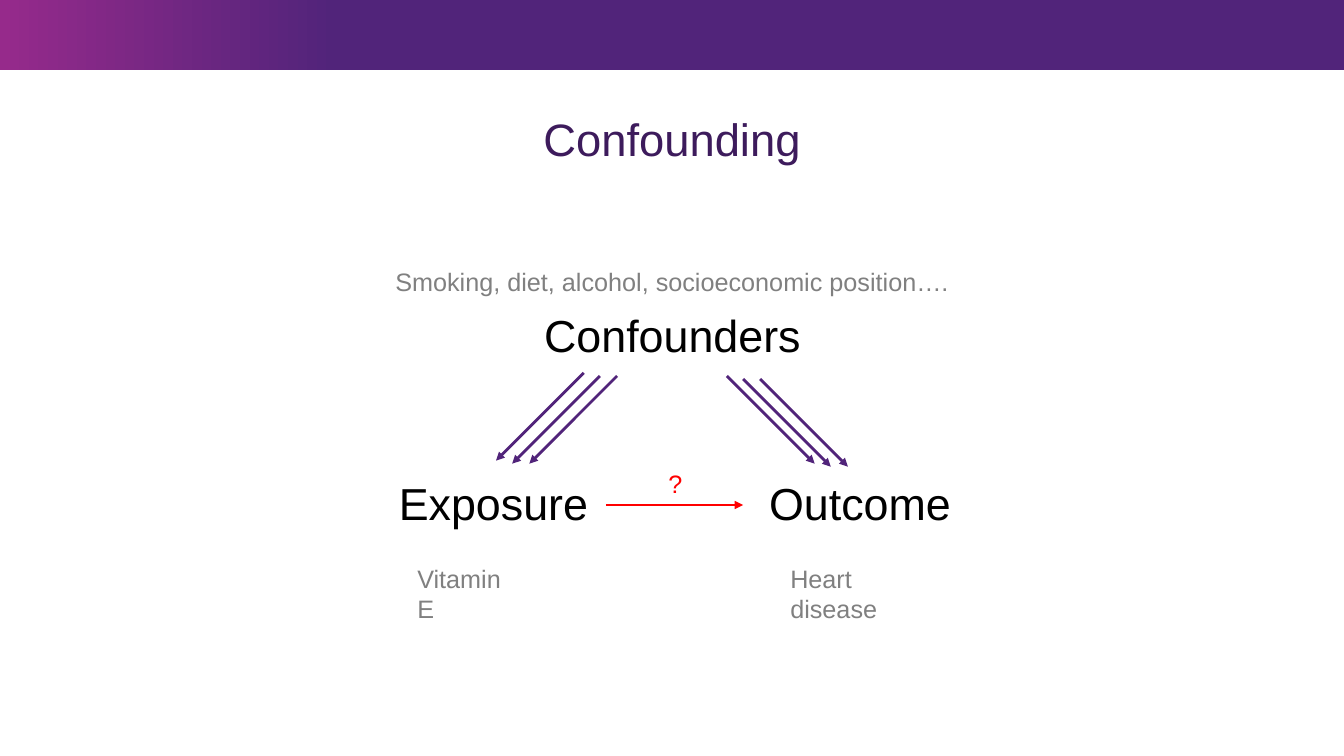
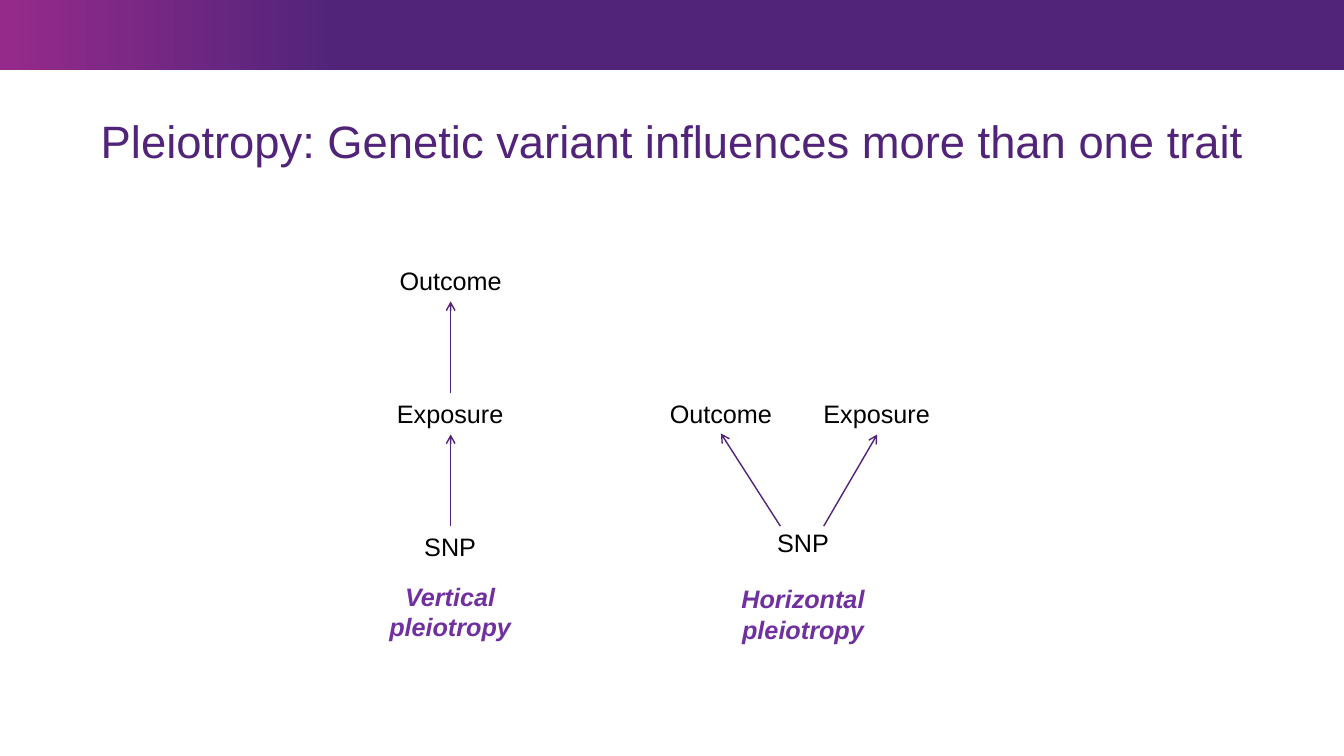
from dataclasses import dataclass

from lxml.etree import SubElement
from pptx import Presentation
from pptx.dml.color import RGBColor as Rgb
from pptx.enum.shapes import MSO_CONNECTOR as Conn, MSO_SHAPE as Shape
from pptx.enum.text import MSO_ANCHOR as Anchor, MSO_AUTO_SIZE as Auto, PP_ALIGN as Align
from pptx.oxml.ns import qn
from pptx.slide import Slide
from pptx.text.text import Font
from pptx.util import Inches, Pt


@dataclass(frozen=True)
class Theme:
    font: str = "Arial"
    purple: str = "51247A"
    dark: str = "3D1B5C"
    pink: str = "962A8B"
    violet: str = "7030A0"
    grey: str = "808080"
    black: str = "000000"
    red: str = "FF0000"
    title: float = 32.4
    large: float = 32
    small: float = 18


THEME = Theme()


@dataclass(frozen=True)
class Label:
    text: str
    left: float
    top: float
    width: float
    height: float = 0.4
    size: float = THEME.small
    color: str = THEME.black
    align: Align = Align.CENTER
    strong: bool = False


@dataclass(frozen=True)
class Arrow:
    x1: float
    y1: float
    x2: float
    y2: float
    color: str = THEME.purple
    weight: float = 2
    head: str = "triangle"


def style(font: Font, size: float, color: str, strong: bool = False) -> None:
    font.name = THEME.font
    font.size = Pt(size)
    font.color.rgb = Rgb.from_string(color)
    font.bold = font.italic = strong


def add_band(slide: Slide, width: int) -> None:
    band = slide.shapes.add_shape(Shape.RECTANGLE, 0, 0, width, Inches(0.69))
    band.shadow.inherit = False
    band.line.fill.background()
    band.fill.gradient()
    band.fill.gradient_angle = 0
    stops = ((0, THEME.pink), (0.25, THEME.purple))
    for stop, (place, color) in zip(band.fill.gradient_stops, stops):
        stop.position = place
        stop.color.rgb = Rgb.from_string(color)


def set_title(slide: Slide, text: str, top: float, color: str) -> None:
    title = slide.shapes.title
    title.left, title.top = Inches(0.76), Inches(top)
    title.width, title.height = Inches(11.81), Inches(0.51)
    frame = title.text_frame
    frame.text = text
    frame.auto_size = Auto.NONE
    frame.word_wrap = True
    frame.vertical_anchor = Anchor.MIDDLE
    frame.margin_left = frame.margin_right = 0
    frame.margin_top = frame.margin_bottom = 0
    para = frame.paragraphs[0]
    para.alignment = Align.CENTER
    para.line_spacing = 0.9
    style(para.runs[0].font, THEME.title, color)


def add_label(slide: Slide, label: Label) -> None:
    box = slide.shapes.add_textbox(
        Inches(label.left), Inches(label.top), Inches(label.width), Inches(label.height)
    )
    frame = box.text_frame
    frame.word_wrap = True
    frame.text = label.text
    para = frame.paragraphs[0]
    para.alignment = label.align
    style(para.runs[0].font, label.size, label.color, label.strong)


def add_arrow(slide: Slide, arrow: Arrow) -> None:
    ends = (arrow.x1, arrow.y1, arrow.x2, arrow.y2)
    line = slide.shapes.add_connector(Conn.STRAIGHT, *map(Inches, ends))
    line.line.color.rgb = Rgb.from_string(arrow.color)
    line.line.width = Pt(arrow.weight)
    SubElement(line.line._get_or_add_ln(), qn("a:tailEnd"), type=arrow.head)
    SubElement(line._element.spPr, qn("a:effectLst"))


def big(text: str, left: float, top: float, width: float) -> Label:
    return Label(text, left, top, width, 0.64, THEME.large)


def note(text: str, left: float, top: float, width: float, align: Align = Align.LEFT) -> Label:
    return Label(text, left, top, width, color=THEME.grey, align=align)


def name(text: str, left: float, top: float) -> Label:
    return Label(text, left, top, 1.77, 0.71, color=THEME.violet, strong=True)


def thin(x1: float, y1: float, x2: float, y2: float) -> Arrow:
    return Arrow(x1, y1, x2, y2, weight=1, head="arrow")


def fans() -> list[Arrow]:
    reach = 0.87
    left = ((5.79, 3.7), (5.95, 3.73), (6.12, 3.73))
    right = ((7.21, 3.73), (7.37, 3.76), (7.54, 3.76))
    return [
        Arrow(x, y, x + side * reach, y + reach)
        for side, starts in ((-1, left), (1, right))
        for x, y in starts
    ]


@dataclass(frozen=True)
class Page:
    title: str
    top: float
    color: str
    labels: list[Label]
    arrows: list[Arrow]


PAGES = (
    Page(
        "Confounding", 1.15, THEME.dark,
        [
            note("Smoking, diet, alcohol, socioeconomic position….", 3.62, 2.59, 6.09, Align.CENTER),
            big("Confounders", 5.26, 3, 2.82),
            big("Exposure", 3.82, 4.67, 2.15),
            big("Outcome", 7.37, 4.67, 2.32),
            Label("?", 6.53, 4.6, 0.32, color=THEME.red),
            note("Vitamin E", 4.04, 5.54, 1.18),
            note("Heart disease", 7.74, 5.54, 1.6),
        ],
        [Arrow(6.01, 5.01, 7.37, 5.01, THEME.red), *fans()],
    ),
    Page(
        "Pleiotropy: Genetic variant influences more than one trait", 1.17, THEME.purple,
        [
            Label("Outcome", 3.76, 2.58, 1.42),
            Label("Exposure", 3.68, 3.9, 1.57),
            Label("SNP", 3.68, 5.22, 1.57),
            name("Vertical pleiotropy", 3.58, 5.72),
            Label("Outcome", 6.44, 3.9, 1.42),
            Label("Exposure", 7.91, 3.9, 1.57),
            Label("SNP", 7.18, 5.18, 1.57),
            name("Horizontal pleiotropy", 7.08, 5.74),
        ],
        [
            thin(4.47, 3.9, 4.47, 2.99),
            thin(4.47, 5.22, 4.47, 4.31),
            thin(7.74, 5.22, 7.15, 4.3),
            thin(8.17, 5.22, 8.7, 4.31),
        ],
    ),
)


def main() -> None:
    deck = Presentation()
    deck.slide_width, deck.slide_height = Inches(13.33), Inches(7.5)
    for page in PAGES:
        slide = deck.slides.add_slide(deck.slide_layouts[5])
        add_band(slide, deck.slide_width)
        set_title(slide, page.title, page.top, page.color)
        for label in page.labels:
            add_label(slide, label)
        for arrow in page.arrows:
            add_arrow(slide, arrow)
    deck.save("out.pptx")


if __name__ == "__main__":
    main()
